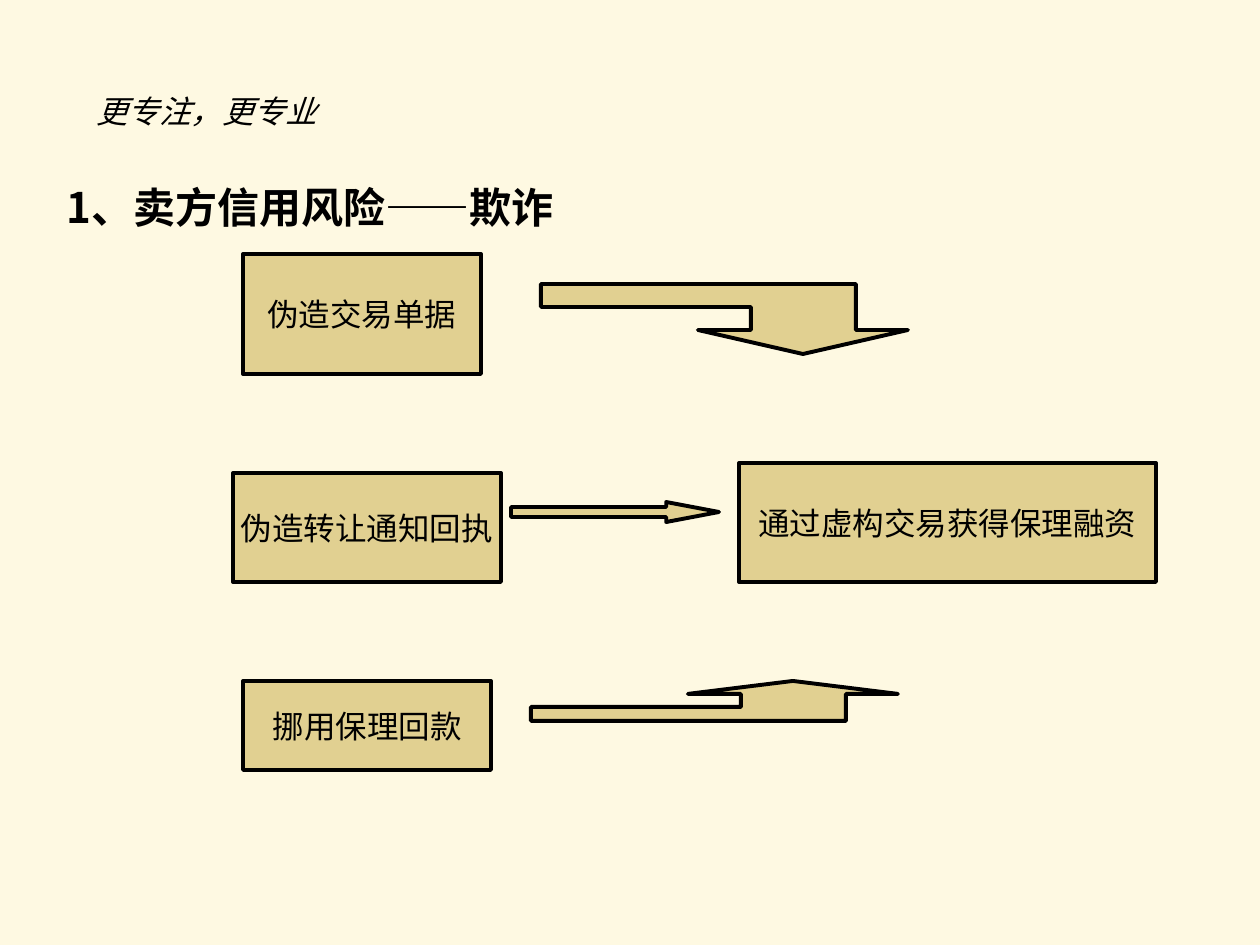
import pptx
import pptx.util
import pptx.dml.color
import pptx.enum.shapes
import pptx.enum.text

UNIT = 914400 / 126
HUES = {"back": "FEF9E2", "sand": "E1D091", "ink": "000000"}
KIND = pptx.enum.shapes.MSO_SHAPE


def emu(*sizes):
    return [round(size * UNIT) for size in sizes]


def paint(shape):
    shape.shadow.inherit = False
    shape.fill.solid()
    shape.fill.fore_color.rgb = pptx.dml.color.RGBColor.from_string(HUES["sand"])
    shape.line.color.rgb = pptx.dml.color.RGBColor.from_string(HUES["ink"])
    shape.line.width = pptx.util.Pt(2.25)


deck = pptx.Presentation()
deck.slide_width, deck.slide_height = emu(1260, 945)
slide = deck.slides.add_slide(deck.slide_layouts[6])
slide.background.fill.solid()
slide.background.fill.fore_color.rgb = pptx.dml.color.RGBColor.from_string(HUES["back"])
ink = pptx.dml.color.RGBColor.from_string(HUES["ink"])

# Heading and motto
for words, place, face, size, bold, slant, space in [
    ("1、卖方信用风险——欺诈", (54, 165, 1113, 625), "Noto Sans CJK SC", 24, True, False, 1.2),
    ("更专注，更专业", (84, 86, 300, 50), "Arial", 18, False, True, 1.0),
]:
    box = slide.shapes.add_textbox(*emu(*place))
    box.text_frame.word_wrap = True
    para = box.text_frame.paragraphs[0]
    para.text = words
    para.line_spacing = space
    para.font.name = face
    para.font.size = pptx.util.Pt(size)
    para.font.bold = bold
    para.font.italic = slant
    para.font.color.rgb = ink

# Fraud types and their result
for words, place in [
    ("伪造交易单据", (243, 254, 238, 120)),
    ("伪造转让通知回执", (233, 473, 268, 109)),
    ("挪用保理回款", (243, 681, 248, 89)),
    ("通过虚构交易获得保理融资", (739, 463, 417, 119)),
]:
    box = slide.shapes.add_shape(KIND.RECTANGLE, *emu(*place))
    paint(box)
    box.text_frame.word_wrap = False
    box.text_frame.vertical_anchor = pptx.enum.text.MSO_ANCHOR.MIDDLE
    para = box.text_frame.paragraphs[0]
    para.text = words
    para.alignment = pptx.enum.text.PP_ALIGN.CENTER
    para.font.name = "Arial"
    para.font.size = pptx.util.Pt(18)
    para.font.color.rgb = ink

# Straight arrow
arrow = slide.shapes.add_shape(KIND.RIGHT_ARROW, *emu(511, 502, 208, 20))
arrow.adjustments[1] = 2.64
paint(arrow)

# Bent arrows: tip, head, elbow and tail edge heights
for left, (tip, head, elbow, edge) in [
    (541, (354, 330, 307, 284)),
    (531, (681, 694, 707, 721)),
]:
    pen = slide.shapes.build_freeform(left + 262, tip, scale=UNIT)
    pen.add_line_segments([
        (left + 157, head), (left + 210, head), (left + 210, elbow),
        (left, elbow), (left, edge), (left + 315, edge),
        (left + 315, head), (left + 367, head),
    ], close=True)
    paint(pen.convert_to_shape())

deck.save("out.pptx")
